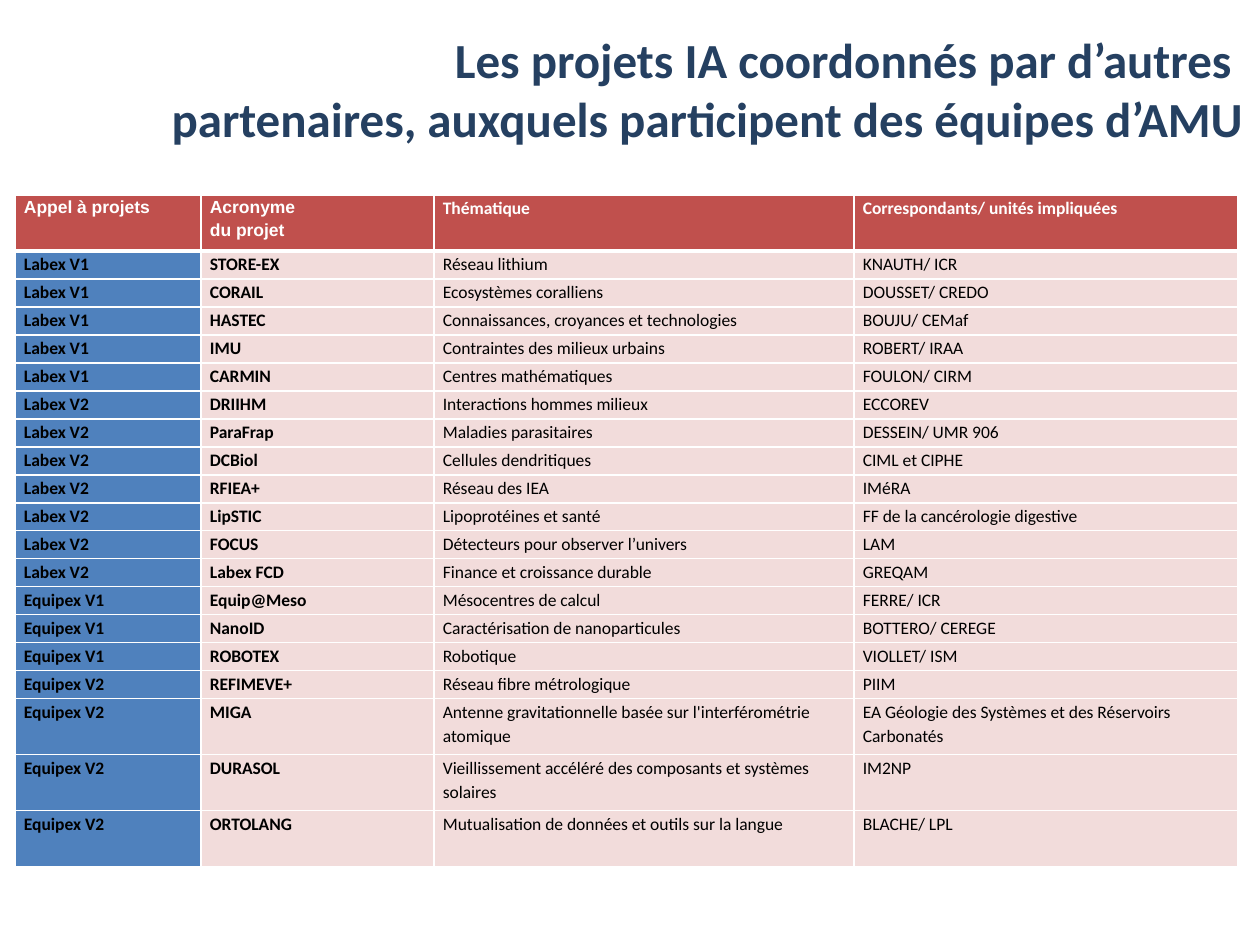
"""Build the slide listing the IA projects coordinated by AMU's partners."""
from lxml import etree
from pptx import Presentation
from pptx.dml.color import RGBColor
from pptx.enum.text import MSO_ANCHOR, MSO_AUTO_SIZE, PP_ALIGN
from pptx.oxml.ns import qn
from pptx.util import Pt

RIGHT, TOP, NO_FIT = PP_ALIGN.RIGHT, MSO_ANCHOR.TOP, MSO_AUTO_SIZE.NONE
PX = 914400 / 126
NAVY = RGBColor(0x25, 0x40, 0x61)
RED = RGBColor(0xC0, 0x50, 0x4D)
BLUE = RGBColor(0x4F, 0x81, 0xBD)
PINK = RGBColor(0xF2, 0xDC, 0xDB)
WHITE = RGBColor(0xFF, 0xFF, 0xFF)
BLACK = RGBColor(0, 0, 0)

TITLE = ["Les projets IA coordonnés par d’autres ",
         "partenaires, auxquels participent des équipes d’AMU"]
COLUMNS = [186, 233, 420, 384]
LINE = 28
HEADER = ["Appel à projets", "Acronyme\ndu projet", "Thématique",
          "Correspondants/ unités impliquées"]
HEADER_FONTS = ["Arial", "Arial", "Calibri", "Calibri"]
CALLS = {
    "Labex V1": [
        ("STORE-EX", "Réseau lithium", "KNAUTH/ ICR"),
        ("CORAIL", "Ecosystèmes coralliens", "DOUSSET/ CREDO"),
        ("HASTEC", "Connaissances, croyances et technologies", "BOUJU/ CEMaf"),
        ("IMU", "Contraintes des milieux urbains", "ROBERT/ IRAA"),
        ("CARMIN", "Centres mathématiques", "FOULON/ CIRM"),
    ],
    "Labex V2": [
        ("DRIIHM", "Interactions hommes milieux", "ECCOREV"),
        ("ParaFrap", "Maladies parasitaires", "DESSEIN/ UMR 906"),
        ("DCBiol", "Cellules dendritiques", "CIML et CIPHE"),
        ("RFIEA+", "Réseau des IEA", "IMéRA"),
        ("LipSTIC", "Lipoprotéines et santé", "FF de la cancérologie digestive"),
        ("FOCUS", "Détecteurs pour observer l’univers", "LAM"),
        ("Labex FCD", "Finance et croissance durable", "GREQAM"),
    ],
    "Equipex V1": [
        ("Equip@Meso", "Mésocentres de calcul", "FERRE/ ICR"),
        ("NanoID", "Caractérisation de nanoparticules", "BOTTERO/ CEREGE"),
        ("ROBOTEX", "Robotique", "VIOLLET/ ISM"),
    ],
    "Equipex V2": [
        ("REFIMEVE+", "Réseau fibre métrologique", "PIIM"),
        ("MIGA", "Antenne gravitationnelle basée sur l'interférométrie atomique",
         "EA Géologie des Systèmes et des Réservoirs Carbonatés"),
        ("DURASOL", "Vieillissement accéléré des composants et systèmes solaires",
         "IM2NP"),
        ("ORTOLANG", "Mutualisation de données et outils sur la langue",
         "BLACHE/ LPL"),
    ],
}
TALL_ROWS = {"Acronyme\ndu projet", "MIGA", "DURASOL", "ORTOLANG"}


def px(length):
    """Turn pixels into EMU."""
    return round(length * PX)


def write(frame, text, font_name, size, color, bold, spacing, align=None):
    """Fill a text frame, one paragraph a line, in one style."""
    frame.text = text
    for para in frame.paragraphs:
        para.alignment = align
        para.line_spacing = spacing
        para.space_before = Pt(0)
        font = para.font
        font.name, font.size, font.bold = font_name, Pt(size), bold
        font.color.rgb = color


def add_title(page):
    """Place the right-aligned title."""
    box = page.shapes.title
    box.left, box.top, box.width, box.height = map(px, (15, 23, 1240, 131))
    frame = box.text_frame
    frame.word_wrap, frame.auto_size = True, NO_FIT
    frame.vertical_anchor = TOP
    write(frame, "\n".join(TITLE), "Calibri", 28, NAVY, True, 1.0, RIGHT)


def add_border(cell, side, width):
    """Draw one white edge of a cell."""
    edge = etree.SubElement(cell._tc.get_or_add_tcPr(), qn(f"a:ln{side}"),
                            w=str(Pt(width)))
    fill = etree.SubElement(edge, qn("a:solidFill"))
    etree.SubElement(fill, qn("a:srgbClr"), val=str(WHITE))


def format_cell(cell, text, fill, font_name, color, bold, top=1, bottom=1):
    """Write and colour one cell."""
    for side, width in zip("LRTB", (1, 1, top, bottom)):
        add_border(cell, side, width)
    cell.fill.solid()
    cell.fill.fore_color.rgb = fill
    cell.margin_left = cell.margin_right = px(9)
    cell.margin_top = cell.margin_bottom = 0
    write(cell.text_frame, text, font_name, 10, color, bold, 1.15)


def add_projects(page):
    """Add the table of projects under its header row."""
    rows = [HEADER] + [(call, *project) for call, projects in CALLS.items()
                       for project in projects]
    heights = [LINE * (2 if row[1] in TALL_ROWS else 1) for row in rows]
    table = page.shapes.add_table(len(rows), len(COLUMNS), px(15), px(195),
                                  px(sum(COLUMNS)), px(sum(heights))).table
    for column, width in zip(table.columns, COLUMNS):
        column.width = px(width)
    for row, height in zip(table.rows, heights):
        row.height = px(height)
    for i, row in enumerate(rows):
        for j, text in enumerate(row):
            cell = table.cell(i, j)
            if i == 0:
                format_cell(cell, text, RED, HEADER_FONTS[j], WHITE, True,
                            bottom=3)
            else:
                format_cell(cell, text, BLUE if j == 0 else PINK, "Calibri",
                            BLACK, j < 2, top=3 if i == 1 else 1)


def main():
    """Build and save the deck."""
    deck = Presentation()
    deck.slide_width, deck.slide_height = px(1260), px(945)
    page = deck.slides.add_slide(deck.slide_layouts[5])
    add_title(page)
    add_projects(page)
    deck.save("out.pptx")


if __name__ == "__main__":
    main()
